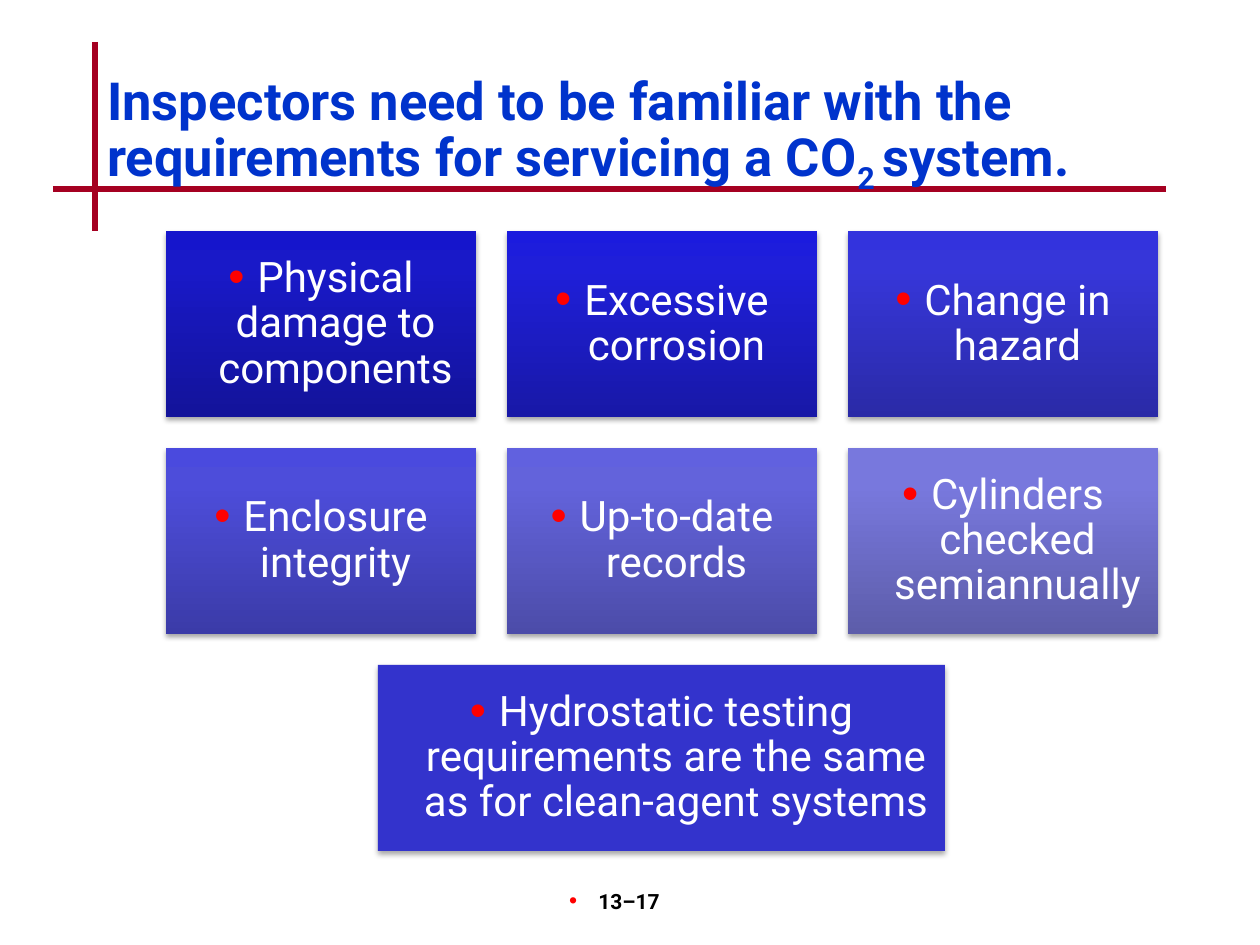
from copy import deepcopy

from lxml import etree
from pptx import Presentation
from pptx.dml.color import RGBColor
from pptx.enum.shapes import MSO_CONNECTOR, MSO_SHAPE
from pptx.enum.text import MSO_ANCHOR, PP_ALIGN
from pptx.oxml.ns import qn
from pptx.util import Emu, Pt

PX = 914400 // 126
FONT = "Roboto"

# Boxes: label and gradient from bottom to top
TILES = [
    ("Physical damage to components", ("13139A", "1919C8", "1515CC")),
    ("Excessive corrosion", ("1818A7", "1F1FD9", "1B1BDE")),
    ("Change in hazard", ("2A2AA7", "3636D9", "3333DD")),
    ("Enclosure integrity", ("3B3BA8", "4D4DDA", "4A4ADE")),
    ("Up-to-date records", ("4C4CA9", "6363DB", "6161DF")),
    ("Cylinders checked semiannually", ("5D5DAA", "7878DD", "7777E0")),
]
STOPS = (0, 0.8, 1)
COLUMNS = 3
GRID_LEFT, GRID_TOP = 166, 231
TILE_WIDTH, TILE_HEIGHT, GAP = 310, 186, 31
WIDE_WIDTH = 567


def px(value):
    return Emu(value * PX)


def color(code):
    return RGBColor.from_string(code)


def child(parent, tag, **values):
    element = etree.SubElement(parent, qn(tag))
    for name, value in values.items():
        element.set(name, str(value))
    return element


def add_rule(page, *ends):
    line = page.shapes.add_connector(MSO_CONNECTOR.STRAIGHT, *map(px, ends))
    line.line.color.rgb = color("A50021")
    line.line.width = Pt(3)
    child(line._element.spPr, "a:effectLst")


def add_bullet(para, margin, hang, size):
    properties = para._p.get_or_add_pPr()
    properties.set("marL", str(px(margin)))
    properties.set("indent", str(px(-hang)))
    child(child(properties, "a:buClr"), "a:srgbClr", val="FF0000")
    child(properties, "a:buSzPct", val=size * 1000)
    child(properties, "a:buFont", typeface="Arial")
    child(properties, "a:buChar", char="•")


def add_span(para, text, size, code, bold=False, baseline=0):
    span = para.add_run()
    span.text = text
    formats = {"name": FONT, "size": Pt(size), "bold": bold}
    for name, value in formats.items():
        setattr(span.font, name, value)
    span.font.color.rgb = color(code)
    if baseline:
        span._r.get_or_add_rPr().set("baseline", str(baseline * 1000))


def add_box(page, left, top, width, height, anchor):
    box = page.shapes.add_textbox(*map(px, (left, top, width, height)))
    box.text_frame.word_wrap = True
    box.text_frame.vertical_anchor = anchor
    return box.text_frame.paragraphs[0]


def add_shadow(shape):
    shape.shadow.inherit = False
    effects = shape._element.spPr.find(qn("a:effectLst"))
    shadow = child(effects, "a:outerShdw", blurRad=Pt(3.1), dist=Pt(1.8),
                   dir=90 * 60000, rotWithShape=0)
    child(child(shadow, "a:srgbClr", val="000000"), "a:alpha", val=35000)


def fill_gradient(shape, codes):
    shape.fill.gradient()
    shape.fill.gradient_angle = 90
    stop_list = shape._element.spPr.find(".//" + qn("a:gsLst"))
    stop_list.append(deepcopy(stop_list[-1]))
    for stop, position, code in zip(shape.fill.gradient_stops, STOPS, codes):
        stop.position = position
        stop.color.rgb = color(code)


def add_tile(page, left, top, width, label, codes):
    tile = page.shapes.add_shape(
        MSO_SHAPE.RECTANGLE, *map(px, (left, top, width, TILE_HEIGHT)))
    if len(codes) == 1:
        tile.fill.solid()
        tile.fill.fore_color.rgb = color(codes[0])
    else:
        fill_gradient(tile, codes)
    tile.line.fill.background()
    add_shadow(tile)

    frame = tile.text_frame
    formats = {"word_wrap": True, "vertical_anchor": MSO_ANCHOR.MIDDLE}
    for side in ("left", "right", "top", "bottom"):
        formats["margin_" + side] = Pt(7.2)
    for name, value in formats.items():
        setattr(frame, name, value)
    para = frame.paragraphs[0]
    para.alignment = PP_ALIGN.CENTER
    para.line_spacing = 0.9
    add_bullet(para, 29, 29, 110)
    add_span(para, label, 24, "FFFFFF")


def main():
    deck = Presentation()
    deck.slide_width, deck.slide_height = px(1260), px(945)
    page = deck.slides.add_slide(deck.slide_layouts[6])

    # Crossed rules
    add_rule(page, 95, 42, 95, 231)
    add_rule(page, 53, 189, 1166, 189)

    # Page number
    number = add_box(page, 494, 882, 262, 63, MSO_ANCHOR.TOP)
    number.alignment = PP_ALIGN.CENTER
    add_bullet(number, 7, 29, 110)
    add_span(number, "13–17", 12, "000000", bold=True)

    # Title
    title = add_box(page, 95, 68, 1102, 126, MSO_ANCHOR.BOTTOM)
    title.line_spacing = 0.8
    for text, baseline in (
        ("Inspectors need to be familiar with the "
         "requirements for servicing a CO", 0),
        ("2 ", -25),
        ("system.", 0),
    ):
        add_span(title, text, 30, "0033CC", bold=True, baseline=baseline)

    # Grid of requirements
    for index, (label, codes) in enumerate(TILES):
        row, column = divmod(index, COLUMNS)
        add_tile(page, GRID_LEFT + column * (TILE_WIDTH + GAP),
                 GRID_TOP + row * (TILE_HEIGHT + GAP),
                 TILE_WIDTH, label, codes)

    # Wide box centred under the grid
    grid_width = COLUMNS * TILE_WIDTH + (COLUMNS - 1) * GAP
    add_tile(page, GRID_LEFT + (grid_width - WIDE_WIDTH) // 2,
             GRID_TOP + 2 * (TILE_HEIGHT + GAP), WIDE_WIDTH,
             "Hydrostatic testing requirements are the same "
             "as for clean-agent systems", ("3333CC",))

    deck.save("out.pptx")


if __name__ == "__main__":
    main()
